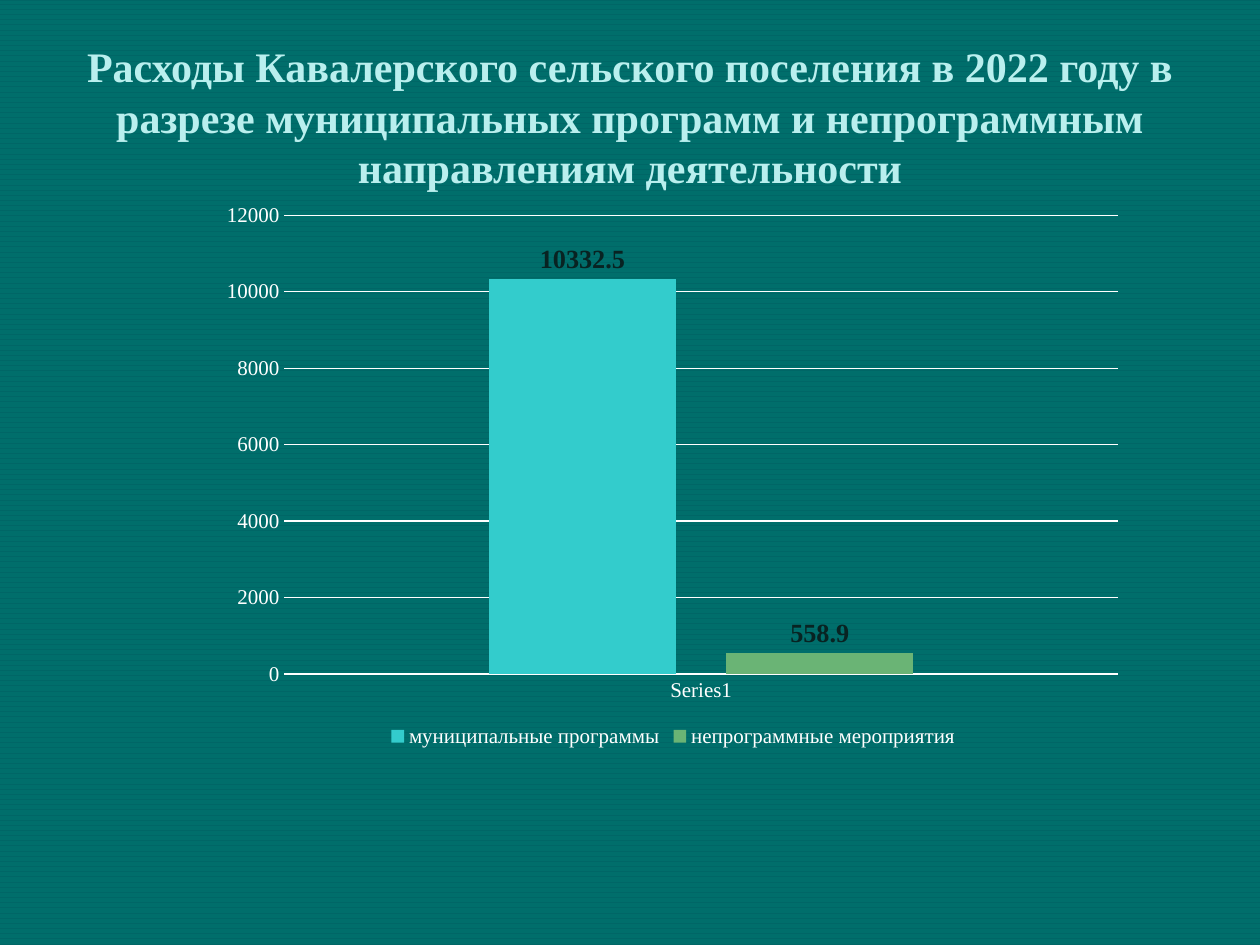
from lxml import etree
from pptx import Presentation, util as u
from pptx.chart.data import CategoryChartData
from pptx.dml.color import RGBColor
from pptx.enum import chart as ch, dml, text
from pptx.oxml.ns import qn

Cm, Pt = u.Cm, u.Pt
FACE = "Times New Roman"
HUES = {
    "back": "006666", "stripe": "006E6B", "title": "B9EFEE",
    "white": "FFFFFF", "label": "082322",
    "programs": "33CCCC", "other": "6AB475",
}
SPEND = [
    ("муниципальные программы", 10332.5, "programs"),
    ("непрограммные мероприятия", 558.9, "other"),
]


def hue(name):
    return RGBColor.from_string(HUES[name])


def style(font, size, color, bold=False):
    font.name, font.size, font.bold = FACE, Pt(size), bold
    font.color.rgb = hue(color)


def paint(slide):
    fill = slide.background.fill
    fill.patterned()
    fill.pattern = dml.MSO_PATTERN.DARK_HORIZONTAL
    fill.fore_color.rgb = hue("stripe")
    fill.back_color.rgb = hue("back")


def add_title(slide, box, words):
    frame = slide.shapes.add_textbox(*box).text_frame
    frame.word_wrap = True
    frame.vertical_anchor = text.MSO_ANCHOR.MIDDLE
    para = frame.paragraphs[0]
    para.text = words
    para.alignment = text.PP_ALIGN.CENTER
    style(para.font, 24, "title", True)


def set_plot(chart, **area):
    """Fix the inner plot area as fractions of the chart."""
    plot = chart._chartSpace.chart.plotArea
    old = plot.find(qn("c:layout"))
    if old is not None:
        plot.remove(old)
    layout = etree.Element(qn("c:layout"))
    manual = etree.SubElement(layout, qn("c:manualLayout"))
    modes = {"layoutTarget": "inner", "xMode": "edge", "yMode": "edge"}
    for tag, val in {**modes, **area}.items():
        etree.SubElement(manual, qn("c:" + tag)).set("val", str(val))
    plot.insert(0, layout)


def add_bars(slide, box):
    data = CategoryChartData()
    data.categories = ["Series1"]
    for name, value, _ in SPEND:
        data.add_series(name, [value])
    kind = ch.XL_CHART_TYPE.COLUMN_CLUSTERED
    chart = slide.shapes.add_chart(kind, *box, data).chart
    style(chart.font, 10, "white")
    chart.has_title = False
    set_plot(chart, x=0.08, y=0.04, w=0.9, h=0.82)

    # Axes and grid
    cat, val = chart.category_axis, chart.value_axis
    for axis in (cat, val):
        axis.major_tick_mark = axis.minor_tick_mark = ch.XL_TICK_MARK.NONE
        style(axis.tick_labels.font, 12, "white")
    val.minimum_scale, val.maximum_scale, val.major_unit = 0, 12000, 2000
    val.format.line.fill.background()
    for line in (cat.format.line, val.major_gridlines.format.line):
        line.color.rgb = hue("white")
        line.width = Pt(0.75)

    # Columns and their labels
    plot = chart.plots[0]
    plot.gap_width, plot.overlap = 219, -27
    plot.vary_by_categories = False
    for series, (_, _, color) in zip(plot.series, SPEND):
        series.format.fill.solid()
        series.format.fill.fore_color.rgb = hue(color)
        series.invert_if_negative = False
        labels = series.data_labels
        labels.show_value = True
        labels.position = ch.XL_LABEL_POSITION.OUTSIDE_END
        style(labels.font, 15, "label", True)

    # Legend
    chart.has_legend = True
    chart.legend.position = ch.XL_LEGEND_POSITION.BOTTOM
    chart.legend.include_in_layout = False
    style(chart.legend.font, 12, "white")


def main():
    deck = Presentation()
    deck.slide_width, deck.slide_height = Cm(25.4), Cm(19.05)
    slide = deck.slides.add_slide(deck.slide_layouts[6])
    paint(slide)
    add_title(
        slide, (Cm(1.27), Cm(0.76), Cm(22.86), Cm(3.18)),
        "Расходы Кавалерского сельского поселения в 2022 году в разрезе "
        "муниципальных программ и непрограммным направлениям деятельности")
    add_bars(slide, (Cm(4.24), Cm(3.89), Cm(18.67), Cm(11.28)))
    deck.save("out.pptx")


if __name__ == "__main__":
    main()
